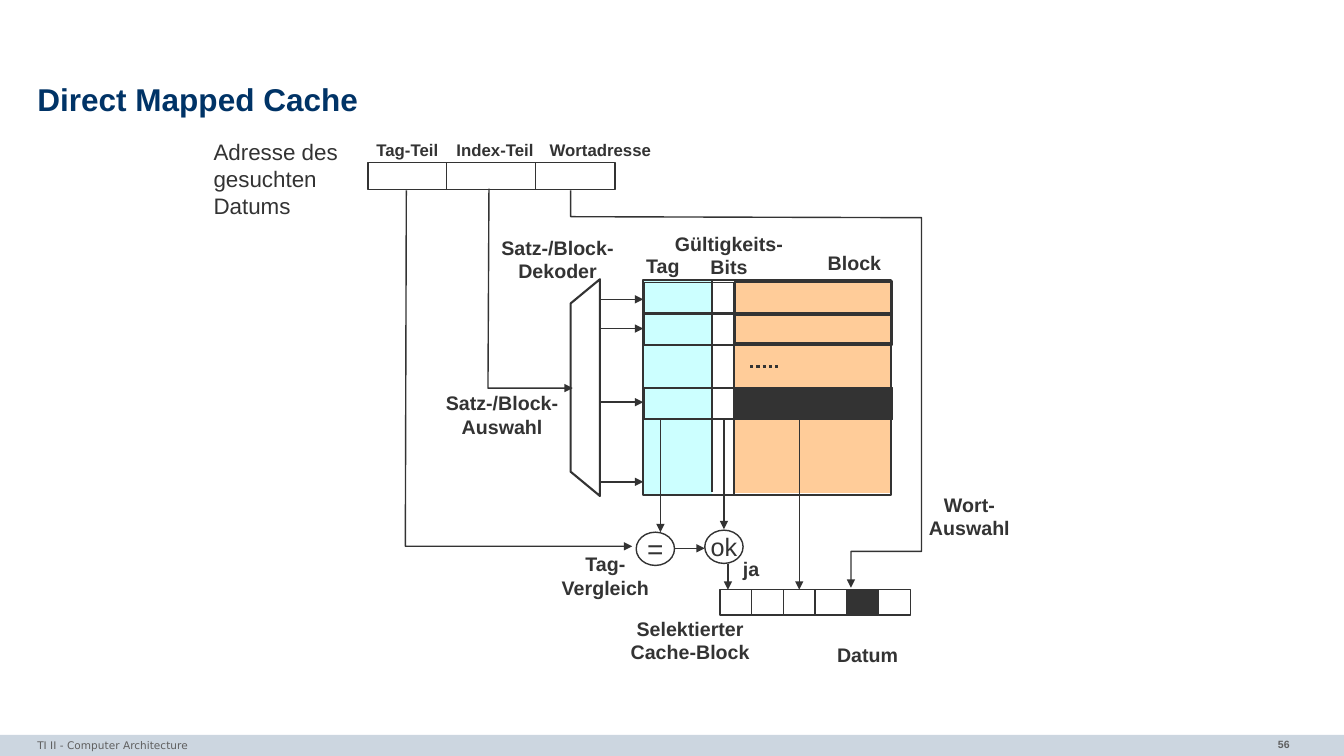
"""Build the slide that explains a direct mapped cache."""
from lxml.etree import SubElement
from pptx import Presentation
from pptx.dml.color import RGBColor
from pptx.enum.dml import MSO_LINE
from pptx.enum.shapes import MSO_CONNECTOR, MSO_SHAPE
from pptx.enum.text import MSO_ANCHOR, MSO_AUTO_SIZE, PP_ALIGN
from pptx.oxml.ns import qn
from pptx.util import Inches, Pt

INK = RGBColor(0x33, 0x33, 0x33)
WHITE = RGBColor(0xFF, 0xFF, 0xFF)
NAVY = RGBColor(0x00, 0x33, 0x66)
GREY = RGBColor(0x5F, 0x5F, 0x5F)
BAR = RGBColor(0xCC, 0xD6, 0xE0)
ORANGE = RGBColor(0xFF, 0xCC, 0x99)
CYAN = RGBColor(0xCC, 0xFF, 0xFF)

COLUMN_LABELS = [
    ("Tag-Teil", 3.62, 1.34, 0.84, 0.3),
    ("Index-Teil", 4.42, 1.34, 0.98, 0.3),
    ("Wortadresse", 5.35, 1.34, 1.21, 0.3),
]
DIAGRAM_LABELS = [
    ("Tag", 6.3, 2.47, 0.55, 0.33),
    ("Block", 8.11, 2.44, 0.73, 0.33),
    ("Gültigkeits-\vBits", 6.59, 2.25, 1.28, 0.57),
    ("Satz-/Block-\vDekoder", 4.87, 2.29, 1.32, 0.57),
    ("Satz-/Block-\vAuswahl", 4.32, 3.83, 1.32, 0.57),
    ("Tag-\vVergleich", 5.47, 5.43, 1.07, 0.57),
    ("ja", 7.27, 5.48, 0.36, 0.33),
    ("Datum", 8.15, 6.33, 0.91, 0.33),
    ("Selektierter\vCache-Block", 6.15, 6.07, 1.39, 0.57),
    ("Wort-\vAuswahl", 9.11, 4.84, 1.01, 0.57),
]


def style_text(frame, text, size, color=INK, bold=False, align=PP_ALIGN.CENTER, font="Arial"):
    """Fill a text frame and format its runs."""
    frame.text = text
    for para in frame.paragraphs:
        para.alignment = align
        for span in para.runs:
            span.font.name = font
            span.font.size = Pt(size)
            span.font.bold = bold
            span.font.color.rgb = color


def add_label(page, text, left, top, width, height, size=14, bold=True, **style):
    """Add a text box that keeps its own line breaks."""
    box = page.shapes.add_textbox(Inches(left), Inches(top), Inches(width), Inches(height))
    box.text_frame.word_wrap = False
    box.text_frame.auto_size = MSO_AUTO_SIZE.SHAPE_TO_FIT_TEXT
    style_text(box.text_frame, text, size, bold=bold, **style)
    return box


def paint(shape, fill=None, weight=None):
    """Set fill and outline of a shape and remove its shadow."""
    if fill is None:
        shape.fill.background()
    else:
        shape.fill.solid()
        shape.fill.fore_color.rgb = fill
    if weight is None:
        shape.line.fill.background()
    else:
        shape.line.color.rgb = INK
        shape.line.width = Pt(weight)
    shape.shadow.inherit = False


def add_box(page, left, top, width, height, fill=None, weight=None, kind=MSO_SHAPE.RECTANGLE):
    """Add a painted preset shape."""
    box = page.shapes.add_shape(kind, Inches(left), Inches(top), Inches(width), Inches(height))
    paint(box, fill, weight)
    return box


def add_circle(page, text, left, top, size):
    """Add one of the round comparison nodes."""
    circle = add_box(page, left, top, 0.38, 0.33, WHITE, 1, MSO_SHAPE.OVAL)
    circle.text_frame.word_wrap = False
    circle.text_frame.vertical_anchor = MSO_ANCHOR.MIDDLE
    style_text(circle.text_frame, text, size)


def add_arrowhead(shape):
    """Put a triangle at the end of a line."""
    SubElement(shape.element.spPr.find(qn("a:ln")), qn("a:tailEnd"), type="triangle")


def add_line(page, x1, y1, x2, y2, weight=1.0, arrow=False):
    """Add a straight line or arrow."""
    line = page.shapes.add_connector(
        MSO_CONNECTOR.STRAIGHT, Inches(x1), Inches(y1), Inches(x2), Inches(y2))
    line.line.color.rgb = INK
    line.line.width = Pt(weight)
    if arrow:
        add_arrowhead(line)
    SubElement(line.element.spPr, qn("a:effectLst"))
    return line


def add_outline(page, points, closed=False, fill=None, weight=1.0):
    """Add a polygon, or an open path that ends in an arrowhead."""
    corners = [(Inches(x), Inches(y)) for x, y in points]
    builder = page.shapes.build_freeform(*corners[0], scale=1.0)
    builder.add_line_segments(corners[1:], close=closed)
    shape = builder.convert_to_shape()
    paint(shape, fill, weight)
    if not closed:
        add_arrowhead(shape)


def add_frame(page):
    """Add title, footer bar, footer text and page number."""
    add_box(page, 0, 7.29, 13.33, 0.21, BAR)
    add_label(page, "56", 11.1, 7.27, 1.79, 0.26, 7.5, color=GREY, align=PP_ALIGN.RIGHT)
    title = page.shapes.title
    title.left, title.top = Inches(0.37), Inches(0.78)
    title.width, title.height = Inches(12.6), Inches(0.47)
    frame = title.text_frame
    frame.margin_left = frame.margin_right = frame.margin_top = frame.margin_bottom = 0
    frame.vertical_anchor = MSO_ANCHOR.MIDDLE
    style_text(frame, "Direct Mapped Cache", 22.5, NAVY, True, PP_ALIGN.LEFT)
    frame.paragraphs[0].line_spacing = 0.85
    footer = add_label(page, "TI II - Computer Architecture", 0.37, 7.28, 8.72, 0.25, 7.5,
                       False, color=GREY, align=PP_ALIGN.LEFT, font="DejaVu Sans")
    footer.text_frame.margin_left = footer.text_frame.margin_right = 0


def add_address(page):
    """Add the three-part address and the paths that leave it."""
    add_box(page, 3.65, 1.61, 2.45, 0.27, WHITE, 1)
    for x in (4.43, 5.31):
        add_line(page, x, 1.61, x, 1.88)
    add_outline(page, [(4.03, 1.89), (4.02, 5.42), (6.27, 5.42)])
    add_outline(page, [(4.85, 1.87), (4.84, 3.85), (5.68, 3.85)])
    add_outline(page, [(5.66, 1.89), (5.66, 2.15), (9.14, 2.16),
                       (9.14, 5.47), (8.44, 5.47), (8.44, 5.83)])


def add_cache(page):
    """Add the decoder and the cache rows it selects."""
    add_box(page, 7.28, 2.78, 1.55, 2.11, ORANGE)
    add_box(page, 6.38, 2.79, 0.68, 2.11, CYAN)
    add_outline(page, [(5.95, 4.92), (5.66, 4.68), (5.66, 3.01), (5.95, 2.77)],
                True, WHITE, 1.5)
    add_box(page, 6.38, 2.78, 2.46, 2.13, weight=1.5)
    for top, weight in ((2.8, 1), (3.11, 1.5), (3.85, 1.5)):
        add_box(page, 6.39, top, 2.46, 0.31, weight=weight)
    add_box(page, 7.29, 3.85, 1.56, 0.31, INK, 1)
    for top, height in ((3.12, 0.28), (2.79, 0.32)):
        add_box(page, 7.29, top, 1.56, height, weight=1.5)
    add_line(page, 7.06, 2.79, 7.06, 4.88, 1.5)
    add_line(page, 7.28, 2.81, 7.28, 4.9, 1.5)
    for y in (2.97, 3.26, 3.99, 4.78):
        add_line(page, 5.95, y, 6.38, y, arrow=True)
    dots = add_line(page, 7.44, 3.64, 7.72, 3.64, 2.25)
    dots.line.dash_style = MSO_LINE.ROUND_DOT


def add_selection(page):
    """Add the tag comparison and the words of the selected block."""
    add_circle(page, "ok", 6.99, 5.26, 18)
    add_circle(page, "=", 6.31, 5.28, 20)
    add_line(page, 6.55, 4.15, 6.55, 5.28, arrow=True)
    add_line(page, 7.18, 4.15, 7.18, 5.25, arrow=True)
    add_line(page, 6.68, 5.44, 6.99, 5.44, arrow=True)
    pitch = 1.89 / 6
    words = [add_box(page, 7.14 + index * pitch, 5.85, pitch, 0.25,
                     INK if index == 4 else WHITE, 1) for index in range(6)]
    center = 7.14 + 2.5 * pitch
    block_arrow = add_line(page, center, 4.15, center, 5.85, arrow=True)
    block_arrow.end_connect(words[2], 0)
    add_line(page, 7.22, 5.6, 7.22, 5.85, arrow=True)


def main():
    """Build and save the slide."""
    deck = Presentation()
    deck.slide_width, deck.slide_height = Inches(13.33), Inches(7.5)
    page = deck.slides.add_slide(deck.slide_layouts[5])
    add_frame(page)
    add_cache(page)
    add_address(page)
    add_selection(page)
    add_label(page, "Adresse des\vgesuchten\vDatums", 2.02, 1.32, 1.5, 0.9, 16, False,
              align=PP_ALIGN.LEFT)
    for label in COLUMN_LABELS:
        add_label(page, *label, size=12)
    for label in DIAGRAM_LABELS:
        add_label(page, *label)
    deck.save("out.pptx")


if __name__ == "__main__":
    main()
